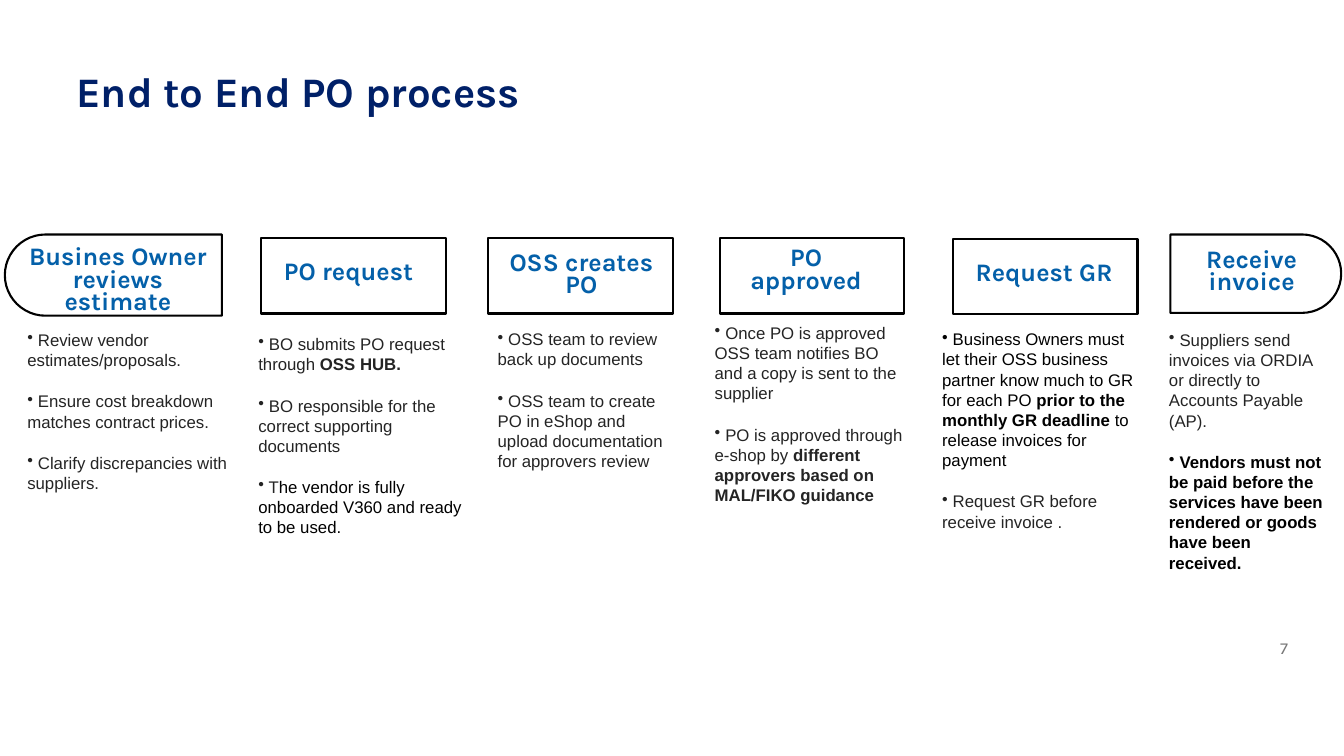
"""Build the End to End PO process slide."""
from lxml.etree import SubElement
from pptx import Presentation
from pptx.dml.color import RGBColor
from pptx.enum.shapes import MSO_SHAPE
from pptx.enum.text import MSO_ANCHOR, PP_ALIGN
from pptx.oxml.ns import qn
from pptx.util import Pt

COLOURS = {
    "navy": "002068",
    "blue": "0460A9",
    "grey": "797979",
    "ink": "242424",
    "black": "000000",
}


class ProcessSlide:
    heading_font = "Karla"
    body_font = "Arial"
    outline_width = 1.5

    def __init__(self, presentation):
        self.slide = presentation.slides.add_slide(presentation.slide_layouts[6])

    def colour(self, name):
        return RGBColor.from_string(COLOURS[name])

    def run(self, paragraph, text, font, size, colour, bold):
        run = paragraph.add_run()
        run.text = text
        run.font.name = font
        run.font.size = Pt(size)
        run.font.bold = bold
        run.font.color.rgb = self.colour(colour)

    def frame(self, left, top, width, height, anchor):
        box = self.slide.shapes.add_textbox(Pt(left), Pt(top), Pt(width), Pt(height))
        frame = box.text_frame
        frame.word_wrap = True
        frame.vertical_anchor = anchor
        frame.margin_left = frame.margin_right = 0
        frame.margin_top = frame.margin_bottom = 0
        return frame

    def label(self, area, text, size, colour, bold=True, align=PP_ALIGN.LEFT, spacing=None):
        paragraph = self.frame(*area, MSO_ANCHOR.MIDDLE).paragraphs[0]
        paragraph.alignment = align
        paragraph.line_spacing = spacing
        self.run(paragraph, text, self.heading_font, size, colour, bold)

    def heading(self, area, text):
        self.label(area, text, 18, "blue", align=PP_ALIGN.CENTER, spacing=Pt(16))

    def notes(self, area, bullets):
        frame = self.frame(*area, MSO_ANCHOR.TOP)
        for index, runs in enumerate(bullets):
            paragraph = frame.add_paragraph() if index else frame.paragraphs[0]
            paragraph.space_before = paragraph.space_after = Pt(7.5)
            properties = paragraph._p.get_or_add_pPr()
            properties.set("marL", "0")
            properties.set("indent", "0")
            SubElement(properties, qn("a:buChar")).set("char", "•")
            for text, colour, bold in runs:
                self.run(paragraph, text, self.body_font, 12, colour, bold)

    def outline(self, kind, left, top, width, height):
        shape = self.slide.shapes.add_shape(kind, Pt(left), Pt(top), Pt(width), Pt(height))
        shape.shadow.inherit = False
        shape.fill.background()
        shape.line.color.rgb = self.colour("black")
        shape.line.width = Pt(self.outline_width)
        return shape

    def step_box(self, left, top, width, height):
        self.outline(MSO_SHAPE.RECTANGLE, left, top, width, height)

    def end_box(self, left, top, width, height, rotation):
        shift = (width - height) / 2
        shape = self.outline(
            MSO_SHAPE.ROUND_2_SAME_RECTANGLE, left + shift, top - shift, height, width
        )
        shape.adjustments[0] = 0.5
        shape.rotation = rotation


STEPS = [
    ("Busines Owner reviews estimate", (19.5, 173, 129.5, 57), (19.5, 235.5, 151, 140), [
        [(" Review vendor estimates/proposals.", "ink", False)],
        [(" Ensure cost breakdown matches contract prices.", "ink", False)],
        [(" Clarify discrepancies with suppliers.", "ink", False)],
    ]),
    ("PO request", (199, 176.5, 100, 39.5), (184.5, 238.5, 148.5, 182), [
        [(" BO submits PO request through ", "ink", False), ("OSS HUB.", "ink", True)],
        [(" BO responsible for the correct supporting documents", "ink", False)],
        [(" T", "ink", False),
         ("he vendor is fully onboarded V360 and ready to be used.", "black", False)],
    ]),
    ("OSS creates PO", (363, 177, 104.5, 40.5), (355.5, 235, 127.5, 140), [
        [(" OSS team to review back up documents", "ink", False)],
        [(" OSS team to create PO in eShop and upload documentation for approvers review",
          "ink", False)],
    ]),
    ("PO approved", (523.5, 174, 104.5, 40.5), (510.5, 230.5, 134.5, 151), [
        [(" Once PO is approved OSS team notifies BO and a copy is sent to the supplier",
          "ink", False)],
        [(" PO is approved through e-shop by ", "ink", False),
         ("different approvers based on MAL/FIKO guidance", "ink", True)],
    ]),
    ("Request GR", (693.5, 185, 104.5, 24), (673, 235, 139, 169), [
        [(" Business Owners must let their OSS business partner know much to GR for each PO ",
          "black", False),
         ("prior to the monthly GR deadline ", "black", True),
         ("to release invoices for payment", "black", False)],
        [(" Request GR before receive invoice .", "ink", False)],
    ]),
    ("Receive invoice", (848, 175, 92, 40.5), (835, 235.5, 111, 184), [
        [(" Suppliers send invoices via ORDIA or directly to Accounts Payable (AP).",
          "ink", False)],
        [(" Vendors must not be paid before the services have been rendered or goods "
          "have been received.", "black", True)],
    ]),
]


def main():
    presentation = Presentation()
    presentation.slide_width = Pt(960)
    presentation.slide_height = Pt(540)
    process = ProcessSlide(presentation)

    process.label((54.5, 28, 633, 77), "End to End PO process", 30, "navy", spacing=0.95)
    process.label((891, 456, 29, 14), "7", 12, "grey", bold=False, align=PP_ALIGN.RIGHT)

    process.end_box(3.5, 167.5, 155, 58, 270)
    for left, top in ((186.5, 170), (348.5, 170), (514, 170), (680.5, 170.5)):
        process.step_box(left, top, 132, 54)
    process.end_box(836, 167.5, 122, 56, 90)

    for title, title_area, notes_area, bullets in STEPS:
        process.heading(title_area, title)
        process.notes(notes_area, bullets)

    presentation.save("out.pptx")


if __name__ == "__main__":
    main()
